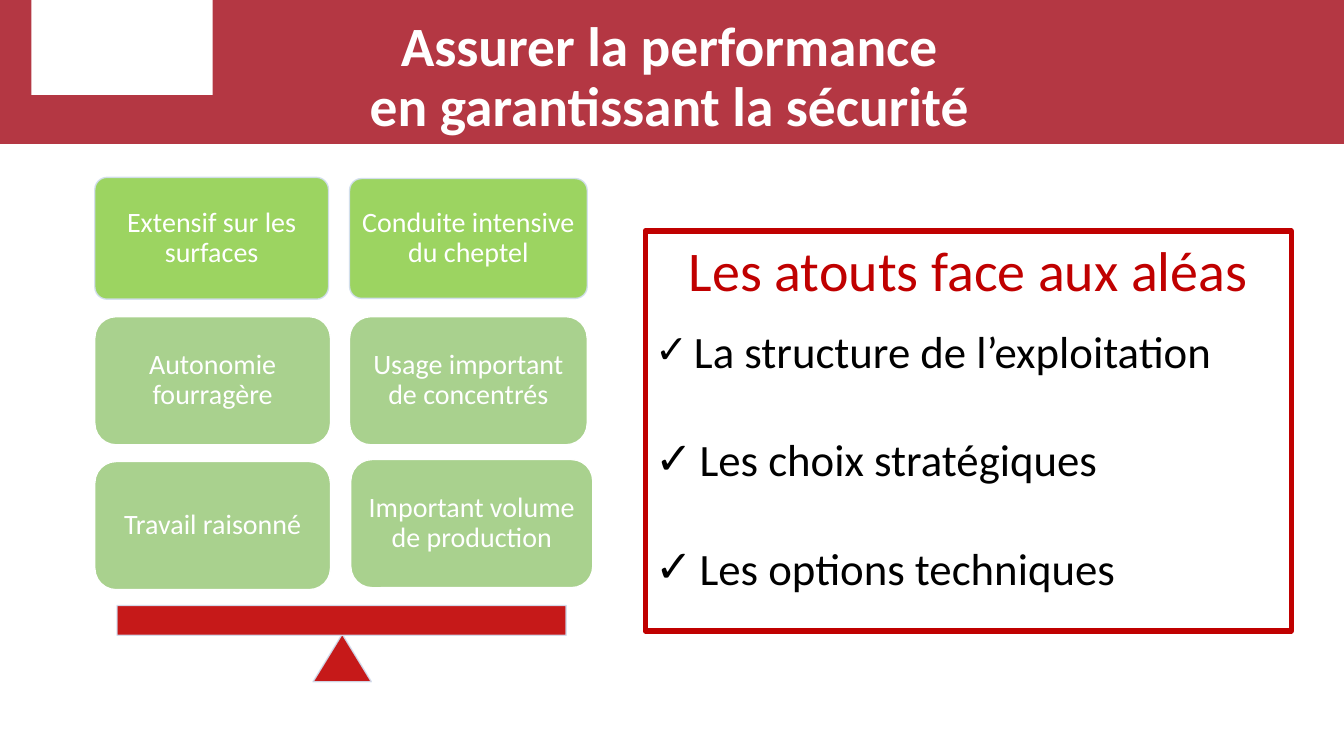
from dataclasses import dataclass

from lxml import etree
from pptx import Presentation
from pptx import util as u
from pptx.dml.color import RGBColor
from pptx.enum import shapes, text
from pptx.oxml.ns import qn

Cm, Pt = u.Cm, u.Pt
Kind = shapes.MSO_SHAPE


@dataclass(frozen=True)
class Theme:
    font: str = "Calibri"
    white: str = "FFFFFF"
    black: str = "000000"
    banner: str = "A71523"
    red: str = "C00000"
    bright_green: str = "92D050"
    soft_green: str = "A9D18E"
    pale_line: str = "D2DEEF"
    title_size: float = 39.6
    heading_size: float = 40
    item_size: float = 32
    card_size: float = 20


@dataclass(frozen=True)
class Box:
    left: float
    top: float
    width: float
    height: float


@dataclass(frozen=True)
class Card:
    label: str
    box: Box
    is_header: bool = False


@dataclass(frozen=True)
class Item:
    label: str
    space_before: float
    indent: float
    bullet_percent: int


THEME = Theme()

CARDS = [
    Card("Extensif sur les surfaces", Box(2.39, 4.47, 5.89, 3.07), True),
    Card("Conduite intensive du cheptel", Box(8.81, 4.5, 5.99, 3.02), True),
    Card("Autonomie fourragère", Box(2.39, 7.98, 5.94, 3.23)),
    Card("Usage important de concentrés", Box(8.81, 7.98, 5.99, 3.23)),
    Card("Travail raisonné", Box(2.39, 11.63, 5.94, 3.23)),
    Card("Important volume de production", Box(8.84, 11.58, 6.1, 3.23)),
]

ITEMS = [
    Item("La structure de l’exploitation", 14.6, 0.98, 88),
    Item("Les choix stratégiques", 39, 1.12, 100),
    Item("Les options techniques", 39, 1.12, 100),
]


def add_box(slide, kind: Kind, box: Box, fill: str | None = None, opacity: int = 100,
            line: str | None = None, line_width: float = 1):
    """Add a flat preset shape, with optional fill and outline."""
    shape = slide.shapes.add_shape(kind, Cm(box.left), Cm(box.top), Cm(box.width), Cm(box.height))
    shape.shadow.inherit = False
    if fill:
        shape.fill.solid()
        shape.fill.fore_color.rgb = RGBColor.from_string(fill)
    else:
        shape.fill.background()
    if line:
        shape.line.color.rgb = RGBColor.from_string(line)
        shape.line.width = Pt(line_width)
    else:
        shape.line.fill.background()
    if opacity < 100:
        for color in shape._element.spPr.iter(qn("a:srgbClr")):
            etree.SubElement(color, qn("a:alpha"), val=str(opacity * 1000))
    return shape


def format_paragraph(paragraph, size: float, color: str, bold: bool = False,
                     align=text.PP_ALIGN.CENTER, spacing: float = 1.0) -> None:
    paragraph.alignment = align
    paragraph.line_spacing = spacing
    for run in paragraph.runs:
        run.font.name = THEME.font
        run.font.size = Pt(size)
        run.font.bold = bold
        run.font.color.rgb = RGBColor.from_string(color)


def add_check(paragraph, item: Item) -> None:
    """Give a paragraph a hanging check mark."""
    properties = paragraph._p.get_or_add_pPr()
    properties.set("marL", str(Cm(item.indent)))
    properties.set("indent", str(-Cm(item.indent)))
    etree.SubElement(properties, qn("a:buSzPct"), val=str(item.bullet_percent * 1000))
    etree.SubElement(properties, qn("a:buFont"), typeface=THEME.font)
    etree.SubElement(properties, qn("a:buChar"), char="✓")


def add_banner(slide) -> None:
    add_box(slide, Kind.RECTANGLE, Box(0, -0.03, 33.87, 3.66), THEME.banner, 85)
    add_box(slide, Kind.RECTANGLE, Box(0.79, 0, 4.57, 2.39), THEME.white)
    title = slide.shapes.add_textbox(Cm(0.79), Cm(0.66), Cm(32.16), Cm(2.62))
    frame = title.text_frame
    frame.word_wrap = True
    frame.vertical_anchor = text.MSO_ANCHOR.MIDDLE
    frame.paragraphs[0].text = "Assurer la performance\ven garantissant la sécurité"
    format_paragraph(frame.paragraphs[0], THEME.title_size, THEME.white, bold=True, spacing=0.9)


def add_card(slide, card: Card) -> None:
    if card.is_header:
        shape = add_box(slide, Kind.ROUNDED_RECTANGLE, card.box, THEME.bright_green, 90,
                        THEME.pale_line)
        shape.adjustments[0] = 0.1
    else:
        shape = add_box(slide, Kind.ROUNDED_RECTANGLE, card.box, THEME.soft_green,
                        line=THEME.white)
    frame = shape.text_frame
    frame.word_wrap = True
    frame.vertical_anchor = text.MSO_ANCHOR.MIDDLE
    frame.margin_left = frame.margin_right = frame.margin_top = frame.margin_bottom = Cm(0.2)
    frame.text = card.label
    format_paragraph(frame.paragraphs[0], THEME.card_size, THEME.white, spacing=0.9)


def add_balance(slide) -> None:
    for kind, box in ((Kind.ISOSCELES_TRIANGLE, Box(7.89, 15.98, 1.47, 1.2)),
                      (Kind.RECTANGLE, Box(2.95, 15.26, 11.32, 0.75))):
        add_box(slide, kind, box, THEME.red, 90, THEME.pale_line)


def add_strengths(slide) -> None:
    shape = add_box(slide, Kind.RECTANGLE, Box(16.26, 5.82, 16.28, 10.08),
                    line=THEME.red, line_width=3.75)
    frame = shape.text_frame
    frame.word_wrap = True
    frame.vertical_anchor = text.MSO_ANCHOR.TOP
    frame.text = "Les atouts face aux aléas"
    format_paragraph(frame.paragraphs[0], THEME.heading_size, THEME.red)
    for item in ITEMS:
        paragraph = frame.add_paragraph()
        paragraph.text = item.label
        add_check(paragraph, item)
        paragraph.space_before = Pt(item.space_before)
        format_paragraph(paragraph, THEME.item_size, THEME.black, align=text.PP_ALIGN.LEFT)


def main() -> None:
    presentation = Presentation()
    presentation.slide_width, presentation.slide_height = Cm(33.87), Cm(19.05)
    slide = presentation.slides.add_slide(presentation.slide_layouts[6])

    # Title banner
    add_banner(slide)

    # Two columns of cards resting on a balance
    for card in CARDS:
        add_card(slide, card)
    add_balance(slide)

    # Framed list of strengths
    add_strengths(slide)

    presentation.save("out.pptx")


if __name__ == "__main__":
    main()
